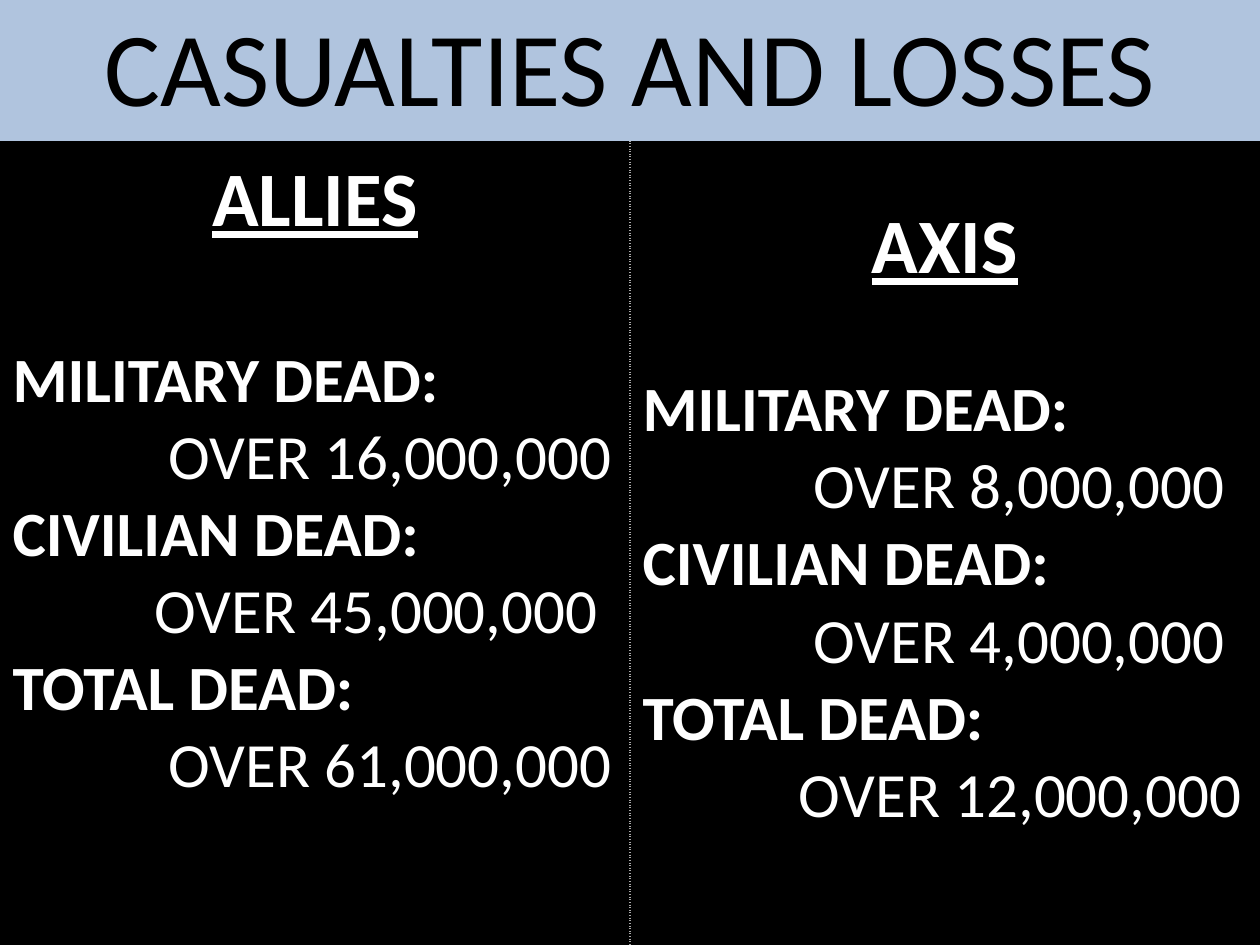
from lxml import etree
from pptx import Presentation
from pptx.dml.color import RGBColor
from pptx.enum import text
from pptx.oxml import ns
from pptx.util import Inches, Pt

WHITE, BLACK, BAND, RULE = "FFFFFF", "000000", "B0C4DE", "AAAAAA"
NO_GRID_STYLE = "{2D5ABB26-0587-4C30-8999-92F81FD0307C}"

# side, space after heading (pt), bottom margin (in), (label, value, indent in)
SIDES = [
    ("ALLIES", 54, 1.27, [
        ("MILITARY DEAD:", "OVER 16,000,000", 1.24),
        ("CIVILIAN DEAD:", "OVER 45,000,000", 1.13),
        ("TOTAL DEAD:", "OVER 61,000,000", 1.24)]),
    ("AXIS", 44, 0.66, [
        ("MILITARY DEAD:", "OVER 8,000,000", 1.36),
        ("CIVILIAN DEAD:", "OVER 4,000,000", 1.36),
        ("TOTAL DEAD:", "OVER 12,000,000", 1.24)]),
]


def rgb(color):
    return RGBColor.from_string(color)


def add_line(tf, words, size, color=WHITE, bold=False, underline=False,
             centered=False, indent=0):
    """Fill the empty first paragraph, or add one after the last."""
    p = tf.paragraphs[0] if not tf.paragraphs[0].runs else tf.add_paragraph()
    p.alignment = text.PP_ALIGN.CENTER if centered else text.PP_ALIGN.LEFT
    if indent:
        p._p.get_or_add_pPr().set("marL", str(Inches(indent)))
    r = p.add_run()
    r.text = words
    r.font.name = "Calibri"
    r.font.size = Pt(size)
    r.font.bold = bold
    r.font.underline = underline
    r.font.color.rgb = rgb(color)
    return p


def dotted_border(cell, edge):
    ln = etree.Element(ns.qn(f"a:{edge}"), w=str(Pt(0.75)))
    fill = etree.SubElement(ln, ns.qn("a:solidFill"))
    etree.SubElement(fill, ns.qn("a:srgbClr"), val=RULE)
    etree.SubElement(ln, ns.qn("a:prstDash"), val="dot")
    cell._tc.get_or_add_tcPr().insert(0, ln)


def add_casualty_table(s):
    frame = s.shapes.add_table(2, 2, 0, 0, Inches(10), Inches(7.69))
    table = frame.table
    table._tbl.tblPr.find(ns.qn("a:tableStyleId")).text = NO_GRID_STYLE
    for column in table.columns:
        column.width = Inches(5)
    for row, height in zip(table.rows, (1.1, 6.59)):
        row.height = Inches(height)
    return table


def fill_title(table):
    cell = table.cell(0, 0)
    cell.merge(table.cell(0, 1))
    cell.fill.solid()
    cell.fill.fore_color.rgb = rgb(BAND)
    cell.vertical_anchor = text.MSO_ANCHOR.MIDDLE
    add_line(cell.text_frame, "CASUALTIES AND LOSSES", 60, BLACK, centered=True)


def fill_side(cell, side, gap, bottom, losses):
    cell.fill.background()
    cell.vertical_anchor = text.MSO_ANCHOR.MIDDLE
    cell.margin_bottom = Inches(bottom)
    tf = cell.text_frame
    heading = add_line(tf, side, 44, bold=True, underline=True, centered=True)
    heading.space_after = Pt(gap)
    for label, value, indent in losses:
        add_line(tf, label, 36, bold=True)
        add_line(tf, value, 36, indent=indent)


def main():
    prs = Presentation()
    prs.slide_width, prs.slide_height = Inches(10), Inches(7.5)
    s = prs.slides.add_slide(prs.slide_layouts[6])

    # Black background
    s.background.fill.solid()
    s.background.fill.fore_color.rgb = rgb(BLACK)

    # Title band over two columns with a dotted divider
    table = add_casualty_table(s)
    fill_title(table)
    for column, (side, edge) in enumerate(zip(SIDES, ("lnR", "lnL"))):
        cell = table.cell(1, column)
        fill_side(cell, *side)
        dotted_border(cell, edge)

    prs.save("out.pptx")


if __name__ == "__main__":
    main()
